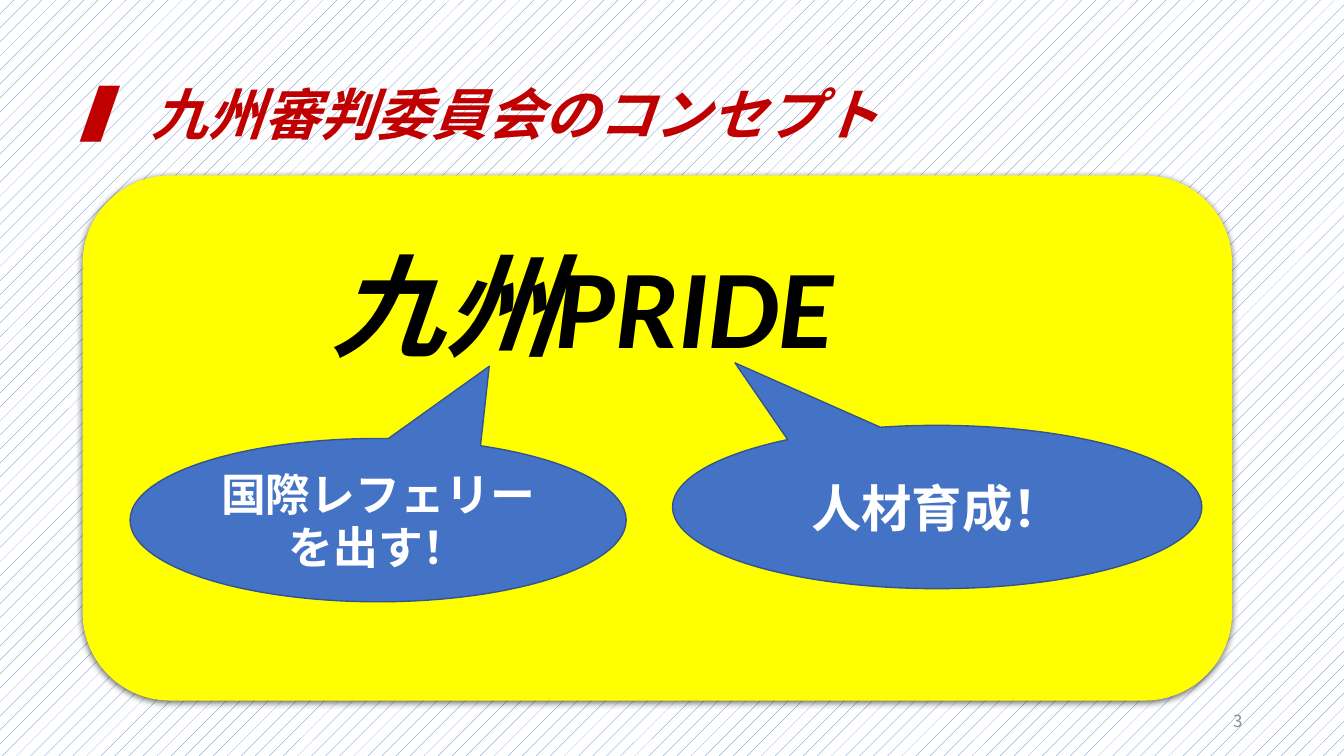
import pptx
import pptx.dml.color
import pptx.enum.dml
import pptx.enum.shapes
import pptx.enum.text
import pptx.oxml
import pptx.oxml.ns
import pptx.util
from pptx.util import Inches

SHAPE = pptx.enum.shapes.MSO_SHAPE
ALIGN = pptx.enum.text.PP_ALIGN
AUTO_SIZE = pptx.enum.text.MSO_AUTO_SIZE

COLORS = {
    "red": "C00000", "yellow": "FFFF00", "blue": "4472C4", "outline": "325491",
    "white": "FFFFFF", "black": "000000", "gray": "8C8C8C",
}
JAPANESE_FONT = "Noto Sans CJK JP"

TITLE = {"text": "▍ 九州審判委員会のコンセプト", "box": (0.72, 0.47, 11.5, 1.38),
         "color": "red", "font": {"size": 40, "bold": True, "italic": True}}
PANEL_BOX = (0.82, 1.74, 11.4, 5.21)
SLOGAN = {"text": "九州PRIDE", "box": (3.19, 2.3, 6.23, 1.45), "color": "black",
          "font": {"name": "Calibri", "size": 80, "bold": True, "italic": True}}
PAGE_NUMBER = {"text": "3", "box": (9.42, 6.95, 3, 0.4), "color": "gray",
               "font": {"size": 12}, "align": ALIGN.RIGHT}
GOALS = [
    {"text": "国際レフェリーを出す！", "box": (1.29, 4.35, 4.92, 1.62), "color": "white",
     "font": {"size": 32, "bold": True}, "align": ALIGN.CENTER, "tip": (0.224, -0.942)},
    {"text": "人材育成！", "box": (6.67, 4.22, 5.25, 1.62), "color": "white",
     "font": {"size": 36, "bold": True}, "align": ALIGN.CENTER, "tip": (-0.382, -0.883)},
]


def rgb(name):
    return pptx.dml.color.RGBColor.from_string(COLORS[name])


def inches(box):
    return [Inches(length) for length in box]


def write(shape, content):
    frame = shape.text_frame
    frame.word_wrap = True
    frame.vertical_anchor = pptx.enum.text.MSO_ANCHOR.MIDDLE
    paragraph = frame.paragraphs[0]
    paragraph.alignment = content.get("align", ALIGN.LEFT)
    run = paragraph.add_run()
    run.text = content["text"]
    formats = {"name": JAPANESE_FONT, **content["font"]}
    formats["size"] = pptx.util.Pt(formats["size"])
    for attribute, value in formats.items():
        setattr(run.font, attribute, value)
    run.font.color.rgb = rgb(content["color"])
    east_asian = pptx.oxml.parse_xml(
        f'<a:ea {pptx.oxml.ns.nsdecls("a")} typeface="{JAPANESE_FONT}"/>')
    run.font._element.find(pptx.oxml.ns.qn("a:latin")).addnext(east_asian)
    return frame


def add_panel(slide):
    panel = slide.shapes.add_shape(SHAPE.ROUNDED_RECTANGLE, *inches(PANEL_BOX))
    panel.fill.solid()
    panel.fill.fore_color.rgb = rgb("yellow")
    panel.line.fill.background()
    panel.shadow.inherit = False
    effects = panel._element.spPr.find(pptx.oxml.ns.qn("a:effectLst"))
    effects.append(pptx.oxml.parse_xml(
        f'<a:outerShdw {pptx.oxml.ns.nsdecls("a")} blurRad="{pptx.util.Pt(4.5)}" '
        f'dist="{pptx.util.Pt(1.5)}" dir="5400000" algn="ctr" rotWithShape="0">'
        f'<a:srgbClr val="{COLORS["black"]}"><a:alpha val="63000"/></a:srgbClr>'
        '</a:outerShdw>'))


def add_goal(slide, goal):
    callout = slide.shapes.add_shape(SHAPE.OVAL_CALLOUT, *inches(goal["box"]))
    for index, offset in enumerate(goal["tip"]):
        callout.adjustments[index] = offset
    callout.fill.solid()
    callout.fill.fore_color.rgb = rgb("blue")
    callout.line.color.rgb = rgb("outline")
    callout.line.width = pptx.util.Pt(1)
    callout.shadow.inherit = False
    write(callout, goal)


def main():
    deck = pptx.Presentation()
    deck.slide_width, deck.slide_height = Inches(13.33), Inches(7.5)
    slide = deck.slides.add_slide(deck.slide_layouts[5])

    backdrop = slide.background.fill
    backdrop.patterned()
    backdrop.pattern = pptx.enum.dml.MSO_PATTERN.PERCENT_5
    backdrop.fore_color.rgb = rgb("blue")
    backdrop.back_color.rgb = rgb("white")

    title = slide.shapes.title
    title.left, title.top, title.width, title.height = inches(TITLE["box"])
    heading = write(title, TITLE)
    heading.auto_size = AUTO_SIZE.NONE
    heading.paragraphs[0].line_spacing = 0.9

    add_panel(slide)
    write(slide.shapes.add_textbox(*inches(PAGE_NUMBER["box"])), PAGE_NUMBER)
    slogan = write(slide.shapes.add_textbox(*inches(SLOGAN["box"])), SLOGAN)
    slogan.word_wrap = False
    slogan.auto_size = AUTO_SIZE.SHAPE_TO_FIT_TEXT
    slogan.vertical_anchor = pptx.enum.text.MSO_ANCHOR.TOP
    for goal in GOALS:
        add_goal(slide, goal)

    deck.save("out.pptx")


if __name__ == "__main__":
    main()
